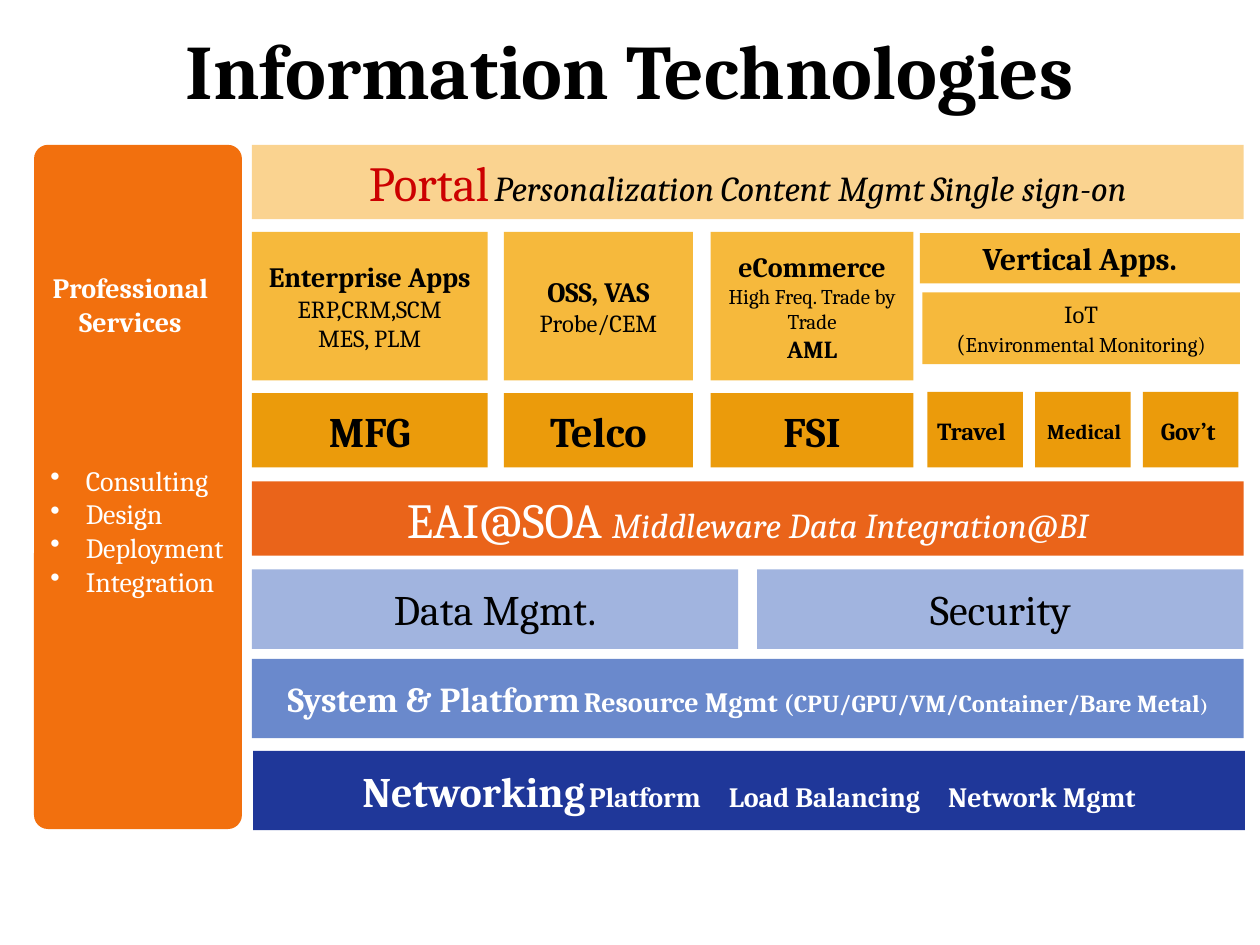
from lxml import etree
from pptx import Presentation
from pptx.dml.color import RGBColor
from pptx.enum.shapes import MSO_SHAPE
from pptx.enum.text import MSO_ANCHOR, PP_ALIGN
from pptx.oxml.ns import qn
from pptx.util import Inches, Pt

RECTANGLE, ROUNDED = MSO_SHAPE.RECTANGLE, MSO_SHAPE.ROUNDED_RECTANGLE
TOP, MIDDLE = MSO_ANCHOR.TOP, MSO_ANCHOR.MIDDLE
LEFT, CENTER = PP_ALIGN.LEFT, PP_ALIGN.CENTER

FONT = "Cambria"
BLACK = RGBColor(0x00, 0x00, 0x00)
WHITE = RGBColor(0xFF, 0xFF, 0xFF)
RED = RGBColor(0xCC, 0x00, 0x00)
SERVICE_ORANGE = RGBColor(0xF2, 0x70, 0x0E)
PORTAL_CREAM = RGBColor(0xFA, 0xD3, 0x90)
APP_YELLOW = RGBColor(0xF6, 0xB9, 0x3C)
INDUSTRY_AMBER = RGBColor(0xEB, 0x9B, 0x0B)
MIDDLEWARE_ORANGE = RGBColor(0xEA, 0x64, 0x1A)
DATA_BLUE = RGBColor(0xA1, 0xB4, 0xDF)
PLATFORM_BLUE = RGBColor(0x6A, 0x89, 0xCC)
NETWORK_BLUE = RGBColor(0x1F, 0x37, 0x99)

# Columns of the stack (left, width) and the shared band sizes
STACK_LEFT, STACK_WIDTH = 2, 7.87
COLUMNS = [(2, 1.87), (4, 1.5), (5.64, 1.61)]
BAND, TALL_BAND = 0.59, 0.63


def add_run(para, text, size, style="", color=BLACK):
    """Add one run; style holds b for bold and i for italic."""
    span = para.add_run()
    span.text = text
    span.font.name = FONT
    span.font.size = Pt(size)
    span.font.bold = "b" in style
    span.font.italic = "i" in style
    span.font.color.rgb = color


def write(box, lines, color=BLACK, align=CENTER, anchor=MIDDLE):
    """Fill a box with lines, each a list of (text, size, style[, color])."""
    frame = box.text_frame
    frame.word_wrap = True
    frame.vertical_anchor = anchor
    for index, line in enumerate(lines):
        para = frame.add_paragraph() if index else frame.paragraphs[0]
        para.alignment = align
        for text, size, style, *own_color in line:
            add_run(para, text, size, style, *(own_color or [color]))


def add_block(page, bounds, fill, lines=(), color=BLACK, kind=RECTANGLE):
    box = page.shapes.add_shape(kind, *map(Inches, bounds))
    box.shadow.inherit = False
    box.fill.solid()
    box.fill.fore_color.rgb = fill
    box.line.fill.background()
    write(box, lines, color)
    return box


def add_label(page, bounds, lines, color=BLACK, anchor=MIDDLE):
    box = page.shapes.add_textbox(*map(Inches, bounds))
    write(box, lines, color, anchor=anchor)


def add_title(page, bounds):
    title = page.shapes.title
    title.left, title.top, title.width, title.height = map(Inches, bounds)
    write(title, [[("Information Technologies", 44, "b")]])


def add_services(page, left, top, width, height):
    """Side panel with its heading and bullets below the middle."""
    panel = add_block(page, (left, top, width, height), SERVICE_ORANGE, kind=ROUNDED)
    panel.adjustments[0] = 0.067
    services = ["Consulting", "Design", "Deployment", "Integration"]
    write(panel, [[(name, 16, "")] for name in services], WHITE, LEFT)
    panel.text_frame.margin_top = Inches(0.74)
    panel.text_frame.margin_right = 0
    for para in panel.text_frame.paragraphs:
        properties = para._p.get_or_add_pPr()
        properties.set("marL", str(Inches(0.28)))
        properties.set("indent", str(-Inches(0.28)))
        etree.SubElement(properties, qn("a:buChar"), char="•")
    heading = [[("Professional", 16, "b")], [("Services", 16, "b")]]
    add_label(page, (left - 0.06, top + 0.95, width, 1.04), heading, WHITE, TOP)


def add_applications(page, top, height):
    """Three application blocks above their industries."""
    applications = [
        [[("Enterprise Apps", 16, "b")], [("ERP,CRM,SCM", 14, "")], [("MES, PLM", 14, "")]],
        [[("OSS, VAS", 16, "b")], [("Probe/CEM", 14, "")]],
        [[("eCommerce", 16, "b")], [("High Freq. Trade by Trade", 12, "")], [("AML", 14, "b")]],
    ]
    industries = ["MFG", "Telco", "FSI"]
    for (left, width), lines, industry in zip(COLUMNS, applications, industries):
        add_block(page, (left, top, width, height), APP_YELLOW, lines)
        add_block(page, (left, top + height + 0.1, width, BAND), INDUSTRY_AMBER,
                  [[(industry, 24, "b")]])


def add_verticals(page, left, top, width):
    """Vertical applications with three sector tiles underneath."""
    add_block(page, (left, top, width, 0.4), APP_YELLOW, [[("Vertical Apps.", 18, "b")]])
    add_block(page, (left + 0.02, top + 0.47, width - 0.02, 0.57), APP_YELLOW,
              [[("IoT", 14, "")],
               [("(", 14, ""), ("Environmental Monitoring)", 12, "")]])
    tile_width, step, tile_top = 0.76, 0.855, top + 1.26
    # Name, size, label width and offset of the label from the tile's middle
    sectors = [("Travel", 14, 0.86, -0.03), ("Medical", 12, 0.95, 0.01),
               ("Gov’t", 14, 0.78, -0.02)]
    for index, (name, size, label_width, offset) in enumerate(sectors):
        tile_left = left + 0.06 + index * step
        add_block(page, (tile_left, tile_top, tile_width, 0.6), INDUSTRY_AMBER)
        label_left = tile_left + (tile_width - label_width) / 2 + offset
        add_label(page, (label_left, tile_top + 0.14, label_width, 0.34),
                  [[(name, size, "b")]])


def add_band(page, top, height, fill, line, color=WHITE, shift=0):
    bounds = (STACK_LEFT + shift, top, STACK_WIDTH, height)
    add_block(page, bounds, fill, [line], color)


def add_data_blocks(page, top, height):
    width, gap = 3.86, 0.15
    for index, name in enumerate(["Data Mgmt.", "Security"]):
        left = STACK_LEFT + index * (width + gap)
        add_block(page, (left, top, width, height), DATA_BLUE, [[(name, 24, "")]])


def main():
    deck = Presentation()
    deck.slide_width, deck.slide_height = Inches(10), Inches(7.5)
    page = deck.slides.add_slide(deck.slide_layouts[5])

    add_title(page, (0.5, 0.17, 9, 0.75))
    add_services(page, 0.27, 1.15, 1.65, 5.43)

    # Stack from the portal down to the network
    add_band(page, 1.15, BAND, PORTAL_CREAM,
             [("Portal", 28, "", RED), (" ", 14, ""), ("Personalization", 20, "i"),
              (" ", 16, ""), ("Content Mgmt", 20, "i"), (" ", 16, ""),
              ("Single sign-on", 20, "i")], BLACK)
    add_applications(page, 1.84, 1.18)
    add_verticals(page, 7.3, 1.85, 2.54)
    add_band(page, 3.82, BAND, MIDDLEWARE_ORANGE,
             [("EAI@SOA", 28, ""), (" ", 26, ""), ("Middleware", 20, "i"),
              (" ", 20, ""), ("Data Integration@BI", 20, "i")])
    add_data_blocks(page, 4.52, TALL_BAND)
    add_band(page, 5.23, TALL_BAND, PLATFORM_BLUE,
             [("System & Platform", 20, "b"), (" ", 10, ""), ("Resource Mgmt ", 16, "b"),
              ("(CPU/GPU/VM/Container/Bare Metal", 14, "b"), (")", 10.5, "b")])
    add_band(page, 5.96, TALL_BAND, NETWORK_BLUE,
             [("Networking", 24, "b"), (" ", 10, ""),
              ("Platform　Load Balancing　Network Mgmt", 16, "b")], shift=0.01)

    deck.save("out.pptx")


if __name__ == "__main__":
    main()
